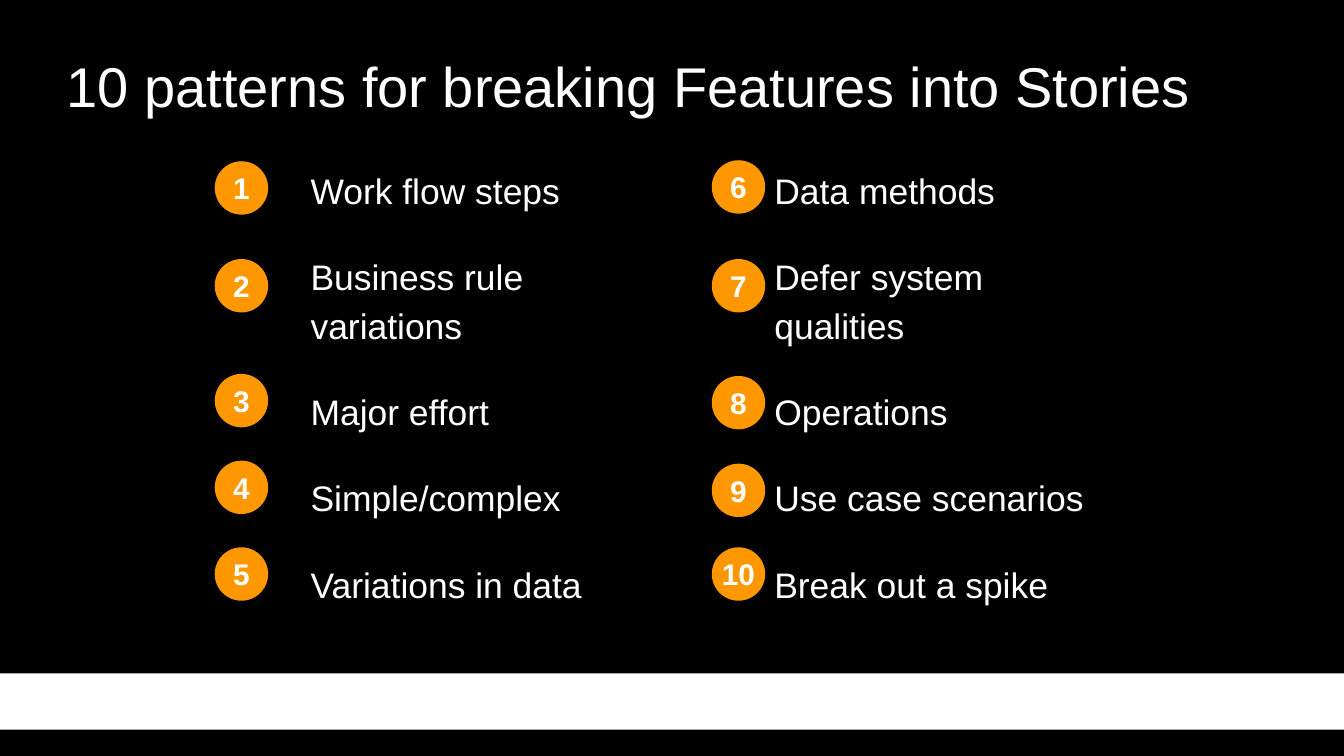
"""Builds the slide of ten patterns for breaking features into stories."""
from pptx import Presentation
from pptx.dml.color import RGBColor
from pptx.enum import shapes, text
from pptx.util import Pt

TITLE = "10 patterns for breaking Features into Stories"
COLUMNS = [
    {"box": (298, 156, 314, 510), "left": 213, "first": 1, "items": [
        ("Work flow steps", 160),
        ("Business rule \vvariations", 257),
        ("Major effort", 371),
        ("Simple/complex", 457),
        ("Variations in data", 543)]},
    {"box": (758, 156, 343, 484), "left": 706, "first": 6, "items": [
        ("Data methods", 159),
        ("Defer system \vqualities", 257),
        ("Operations", 373),
        ("Use case scenarios", 460),
        ("Break out a spike", 543)]},
]
PX = 9144
DOT = 53
FONT = "Arial"
BLACK = RGBColor(0, 0, 0)
WHITE = RGBColor(255, 255, 255)
ORANGE = RGBColor(0xFF, 0x97, 0x00)


def place(shape, box):
    shape.left, shape.top, shape.width, shape.height = (n * PX for n in box)


def style(para, size, align, bold=False):
    para.alignment = align
    font = para.font
    font.name, font.size, font.bold = FONT, Pt(size), bold
    font.color.rgb = WHITE


def inset(frame, x, y):
    frame.margin_left = frame.margin_right = x * PX
    frame.margin_top = frame.margin_bottom = y * PX
    frame.vertical_anchor = text.MSO_ANCHOR.MIDDLE


def draw(slide, kind, box, fill):
    shape = slide.shapes.add_shape(kind, *(n * PX for n in box))
    shape.shadow.inherit = False
    shape.fill.solid()
    shape.fill.fore_color.rgb = fill
    shape.line.fill.background()
    return shape


def fill_list(holder, column):
    place(holder, column["box"])
    frame = holder.text_frame
    frame.auto_size = text.MSO_AUTO_SIZE.NONE
    frame.text = "\n".join(item for item, top in column["items"])
    for para in frame.paragraphs:
        props = para._p.get_or_add_pPr()
        props.set("marL", "0")
        props.set("indent", "0")
        props.append(props.makeelement(
            "{http://schemas.openxmlformats.org/drawingml/2006/main}buNone", {}))
        para.line_spacing = 1.15
        para.space_before = Pt(0)
        para.space_after = Pt(26.7)
        style(para, 25.3, text.PP_ALIGN.LEFT)


def add_dots(slide, column):
    for number, (item, top) in enumerate(column["items"], column["first"]):
        dot = draw(slide, shapes.MSO_SHAPE.OVAL,
                   (column["left"], top, DOT, DOT), ORANGE)
        frame = dot.text_frame
        frame.word_wrap = False
        inset(frame, 0, 0)
        frame.text = str(number)
        style(frame.paragraphs[0], 21.3, text.PP_ALIGN.CENTER, True)


def main():
    deck = Presentation()
    deck.slide_width, deck.slide_height = 1333 * PX, 750 * PX
    slide = deck.slides.add_slide(deck.slide_layouts[3])
    slide.background.fill.solid()
    slide.background.fill.fore_color.rgb = BLACK
    draw(slide, shapes.MSO_SHAPE.RECTANGLE, (0, 668, 1333, 56), WHITE)

    title = slide.shapes.title
    place(title, (53, 43, 1278, 83))
    title.text_frame.text = TITLE
    title.text_frame.auto_size = text.MSO_AUTO_SIZE.NONE
    inset(title.text_frame, 13, 7)
    style(title.text_frame.paragraphs[0], 40, text.PP_ALIGN.LEFT)

    for index, column in enumerate(COLUMNS, 1):
        fill_list(slide.placeholders[index], column)
        add_dots(slide, column)
    deck.save("out.pptx")


if __name__ == "__main__":
    main()
